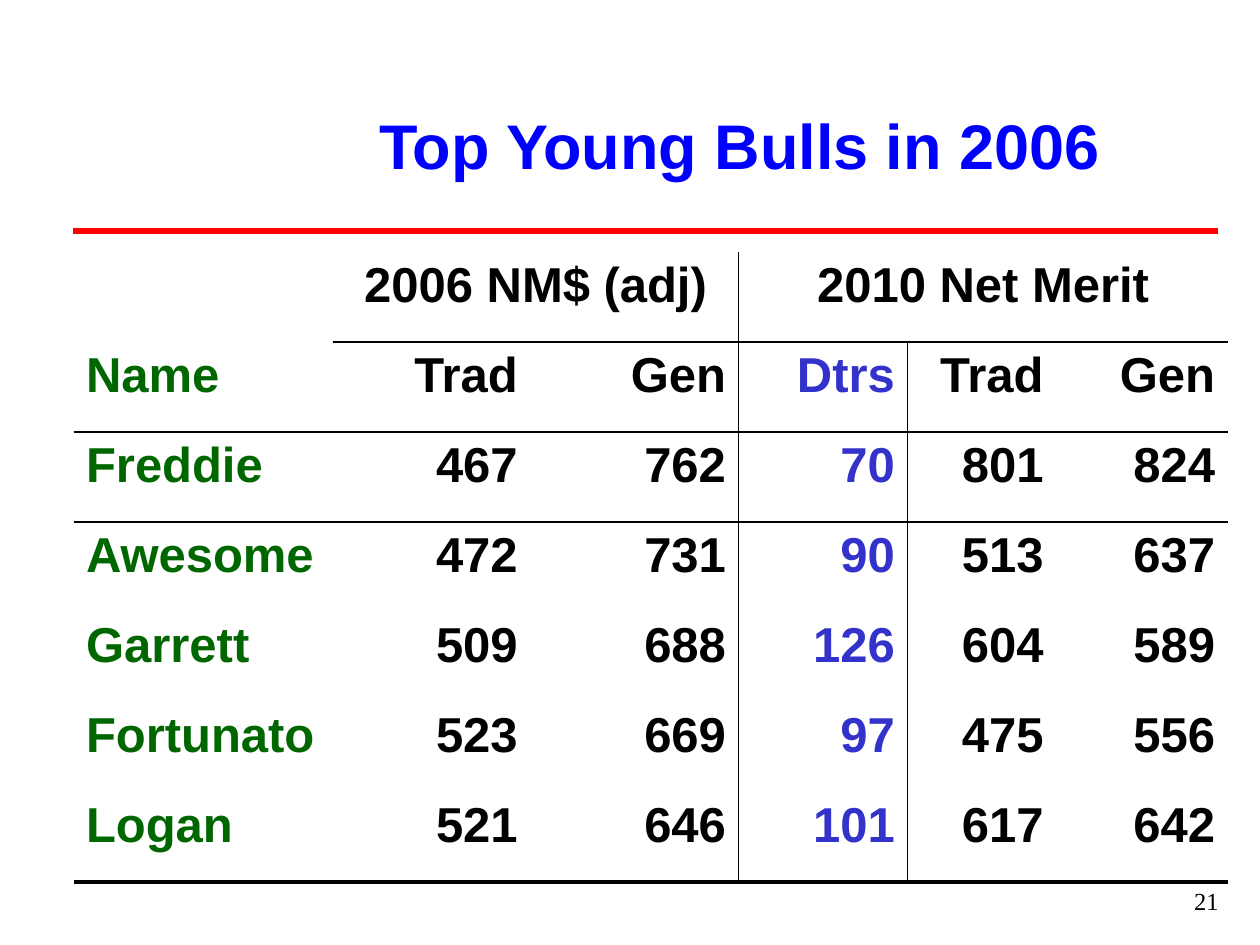
from lxml import etree
from pptx import Presentation, util as u
from pptx.dml.color import RGBColor
from pptx.enum import shapes, text
from pptx.oxml import ns

Pt = u.Pt
LEFT, MID, RIGHT = text.PP_ALIGN.LEFT, text.PP_ALIGN.CENTER, text.PP_ALIGN.RIGHT
HUES = {"title": "0000FF", "rule": "FF0000", "name": "006600",
        "dtrs": "3333CC", "ink": "000000"}
NO_GRID = "{2D5ABB26-0587-4C30-8999-92F81FD0307C}"

WIDTHS = [148, 113, 119, 96.5, 85, 98]
ROWS = [
    ["", "2006 NM$ (adj)", "", "2010 Net Merit", "", ""],
    ["Name", "Trad", "Gen", "Dtrs", "Trad", "Gen"],
    ["Freddie", "467", "762", "70", "801", "824"],
    ["Awesome", "472", "731", "90", "513", "637"],
    ["Garrett", "509", "688", "126", "604", "589"],
    ["Fortunato", "523", "669", "97", "475", "556"],
    ["Logan", "521", "646", "101", "617", "642"],
]
LAST = len(ROWS) - 1


def borders(row, col):
    """Give the ruled sides of a cell as {side: width}."""
    sides = {}
    if col == 3:
        sides["L"] = 1
    if col == 2:
        sides["R"] = 1
    if row == 2 or (row == 1 and col > 0):
        sides["T"] = 1
    if row == 1 or (row == 0 and col > 0):
        sides["B"] = 1
    if row == LAST:
        sides["B"] = 2.25
    return sides


class Deck:
    def __init__(self, wide, high):
        self.prs = Presentation()
        self.prs.slide_width, self.prs.slide_height = Pt(wide), Pt(high)
        self.slide = self.prs.slides.add_slide(self.prs.slide_layouts[6])
        self.font = {"name": "Arial", "size": Pt(28), "bold": True}

    def words(self, para, line, hue, align, **style):
        para.text = line
        para.alignment = align
        for key, val in {**self.font, **style}.items():
            setattr(para.font, key, val)
        para.font.color.rgb = RGBColor.from_string(HUES[hue])

    def label(self, box, line, hue, align, anchor, **style):
        frame = self.slide.shapes.add_textbox(*map(Pt, box)).text_frame
        frame.word_wrap = True
        frame.vertical_anchor = anchor
        self.words(frame.paragraphs[0], line, hue, align, **style)

    def rule(self, left, right, top, hue, width):
        line = self.slide.shapes.add_connector(
            shapes.MSO_CONNECTOR.STRAIGHT, Pt(left), Pt(top), Pt(right), Pt(top))
        line.line.color.rgb = RGBColor.from_string(HUES[hue])
        line.line.width = Pt(width)
        etree.SubElement(line._element.spPr, ns.qn("a:effectLst"))

    def edge(self, cell, side, width):
        props = cell._tc.get_or_add_tcPr()
        line = etree.SubElement(props, ns.qn("a:ln" + side), w=str(Pt(width)))
        fill = etree.SubElement(line, ns.qn("a:solidFill"))
        etree.SubElement(fill, ns.qn("a:srgbClr"), val=HUES["ink"])

    def table(self, left, top, high, widths, rows, spans):
        grid = self.slide.shapes.add_table(
            len(rows), len(widths), Pt(left), Pt(top), Pt(sum(widths)), Pt(high)).table
        grid.first_row = grid.horz_banding = False
        grid._tbl.tblPr.find(ns.qn("a:tableStyleId")).text = NO_GRID
        for col, width in zip(grid.columns, widths):
            col.width = Pt(width)
        for start, end in spans:
            grid.cell(0, start).merge(grid.cell(0, end))
        for r, row in enumerate(rows):
            for c, line in enumerate(row):
                cell = grid.cell(r, c)
                for side, width in borders(r, c).items():
                    self.edge(cell, side, width)
                cell.fill.background()
                hue = {0: "name", 3: "dtrs"}.get(c, "ink") if r else "ink"
                align = MID if r == 0 else RIGHT if c else LEFT
                self.words(cell.text_frame.paragraphs[0], line, hue, align)


def main():
    deck = Deck(720, 540)
    # Title and red rule
    deck.rule(42, 696, 132, "rule", 3)
    deck.label((196, 37.5, 453.5, 90), "Top Young Bulls in 2006", "title", MID,
               text.MSO_ANCHOR.MIDDLE, size=Pt(36))
    # Merit table
    deck.table(42, 144, 360, WIDTHS, ROWS, [(1, 2), (3, 5)])
    # Page number
    deck.label((535.5, 503, 168, 37), "21", "ink", RIGHT, text.MSO_ANCHOR.TOP,
               name="Times New Roman", size=Pt(14), bold=False)
    deck.prs.save("out.pptx")


if __name__ == "__main__":
    main()
